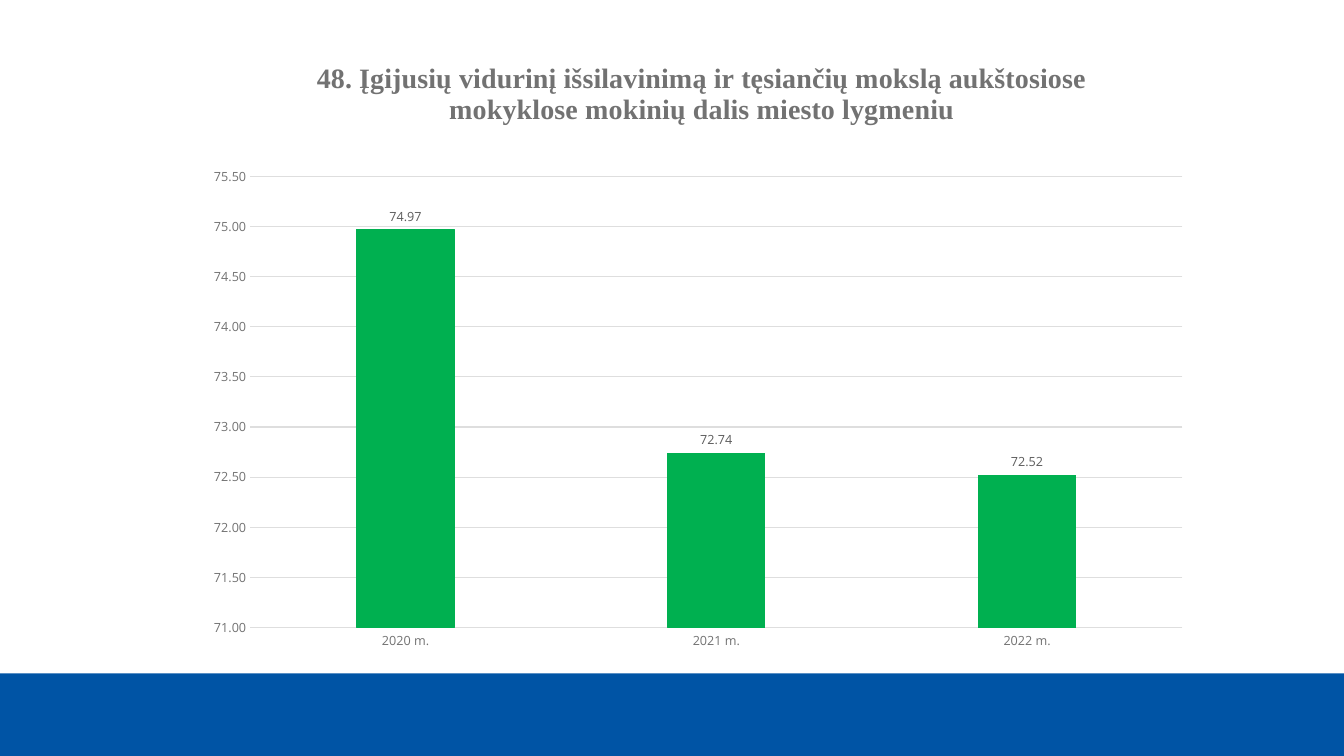
from pptx import Presentation
from pptx.chart.data import CategoryChartData
from pptx.dml.color import RGBColor
from pptx.enum.chart import XL_CHART_TYPE as ChartType, XL_LABEL_POSITION as LabelPosition
from pptx.enum.chart import XL_TICK_MARK as TickMark
from pptx.enum.shapes import MSO_SHAPE as Shape
from pptx.oxml import parse_xml
from pptx.oxml.ns import nsdecls, qn
from pptx.util import Cm, Pt

COLOURS = {
    "banner": "0054A5",
    "bar": "00B050",
    "grid": "DEDEDE",
    "axis": "727272",
    "label": "5C5C5C",
    "text": "262626",
}
BODY_FONT, TITLE_FONT = "Open Sans", "Times New Roman"
WIDTH, HEIGHT = 33.87, 19.05
TITLE = ("48. Įgijusių vidurinį išsilavinimą ir tęsiančių mokslą aukštosiose "
         "mokyklose mokinių dalis miesto lygmeniu")
SHARES = {"2020 m.": 74.97, "2021 m.": 72.74, "2022 m.": 72.52}


def rgb(name):
    return RGBColor.from_string(COLOURS[name])


def set_font(font, size, colour, face=BODY_FONT, bold=False):
    font.size, font.name, font.bold = Pt(size), face, bold
    font.color.rgb = rgb(colour)


def write(frame, text, **style):
    """Put one formatted run of text in a text frame."""
    run = frame.paragraphs[0].add_run()
    run.text = text
    set_font(run.font, **style)


def place(parent, index, target=None, **fractions):
    """Set a chart part's manual layout, in fractions of the chart."""
    for old in parent.findall(qn("c:layout")):
        parent.remove(old)
    inner = f'<c:layoutTarget val="{target}"/>' if target else ""
    inner += "".join(f'<c:{axis}Mode val="edge"/>' for axis in "xy")
    inner += "".join(f'<c:{key} val="{value}"/>' for key, value in fractions.items())
    parent.insert(index, parse_xml(
        f'<c:layout {nsdecls("c")}><c:manualLayout>{inner}</c:manualLayout></c:layout>'))


class SlideBuilder:
    def __init__(self, slide):
        self.slide = slide

    def band(self, left, top, width, height, colour):
        band = self.slide.shapes.add_shape(
            Shape.RECTANGLE, Cm(left), Cm(top), Cm(width), Cm(height))
        band.shadow.inherit = False
        band.fill.solid()
        band.fill.fore_color.rgb = rgb(colour)
        band.line.fill.background()

    def column_chart(self, left, top, width, height, title, values):
        data = CategoryChartData(number_format="0.00")
        data.categories = list(values)
        data.add_series("Series 1", list(values.values()))
        chart = self.slide.shapes.add_chart(
            ChartType.COLUMN_CLUSTERED, Cm(left), Cm(top), Cm(width), Cm(height), data).chart
        set_font(chart.font, 10, "text")
        chart.has_legend = False

        heading = chart.chart_title
        write(heading.text_frame, title, size=20, colour="axis", face=TITLE_FONT, bold=True)
        heading.include_in_layout = False
        place(heading._element, 1, x=0.117, y=0.036)
        place(chart._chartSpace.chart.plotArea, 0, "inner", x=0.056, y=0.229, w=0.924, h=0.716)

        self.style_axes(chart.category_axis, chart.value_axis)
        self.style_bars(chart.plots[0])

    def style_axes(self, years, shares):
        for axis in (years, shares):
            axis.major_tick_mark = axis.minor_tick_mark = TickMark.NONE
            set_font(axis.tick_labels.font, 9, "axis")
        shares.minimum_scale, shares.maximum_scale, shares.major_unit = 71, 75.5, 0.5
        shares.tick_labels.number_format = "0.00"
        shares.tick_labels.number_format_is_linked = False
        shares.format.line.fill.background()
        shares.has_major_gridlines = True
        for line in (years.format.line, shares.major_gridlines.format.line):
            self.style_line(line, "grid")

    def style_bars(self, plot):
        plot.gap_width, plot.overlap, plot.vary_by_categories = 219, -27, False
        bars = plot.series[0]
        bars.format.fill.solid()
        bars.format.fill.fore_color.rgb = rgb("bar")
        self.style_line(bars.format.line, "bar")
        labels = bars.data_labels
        labels.show_value = True
        labels.position = LabelPosition.OUTSIDE_END
        labels.number_format, labels.number_format_is_linked = "0.00", False
        set_font(labels.font, 9, "label")

    def style_line(self, line, colour):
        line.width = Pt(0.75)
        line.color.rgb = rgb(colour)


def main():
    deck = Presentation()
    deck.slide_width, deck.slide_height = Cm(WIDTH), Cm(HEIGHT)
    builder = SlideBuilder(deck.slides.add_slide(deck.slide_layouts[6]))
    banner_top = 16.97
    builder.band(0, banner_top, WIDTH, HEIGHT - banner_top, "banner")
    builder.column_chart(4.88, 0.81, 25.43, 15.88, TITLE, SHARES)
    deck.save("out.pptx")


if __name__ == "__main__":
    main()
